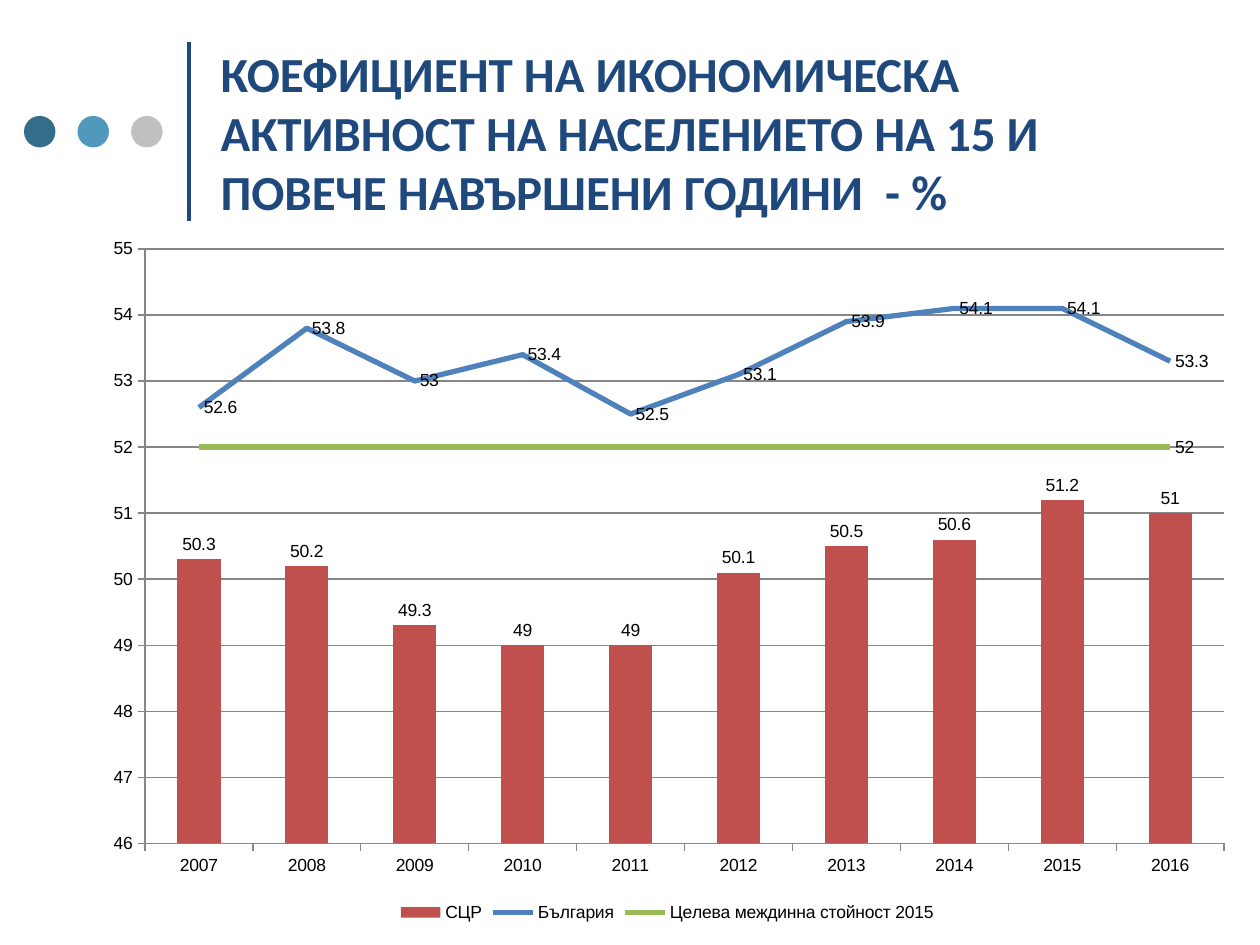
from lxml import etree
from pptx import Presentation
from pptx.chart.data import CategoryChartData
from pptx.dml.color import RGBColor
from pptx.enum.chart import (XL_CHART_TYPE, XL_LABEL_POSITION, XL_LEGEND_POSITION,
                             XL_MARKER_STYLE, XL_TICK_MARK)
from pptx.enum.shapes import MSO_CONNECTOR, MSO_SHAPE
from pptx.enum.text import MSO_ANCHOR, MSO_AUTO_SIZE, PP_ALIGN
from pptx.oxml import parse_xml
from pptx.oxml.ns import nsdecls, qn
from pptx.util import Inches, Pt

COLUMN = XL_CHART_TYPE.COLUMN_CLUSTERED
ABOVE = XL_LABEL_POSITION.OUTSIDE_END
RIGHT = XL_LABEL_POSITION.RIGHT
BOTTOM = XL_LEGEND_POSITION.BOTTOM
PLAIN = XL_MARKER_STYLE.NONE
OUT = XL_TICK_MARK.OUTSIDE
STRAIGHT = MSO_CONNECTOR.STRAIGHT
OVAL = MSO_SHAPE.OVAL
MIDDLE = MSO_ANCHOR.MIDDLE
FIXED = MSO_AUTO_SIZE.NONE
LEFT = PP_ALIGN.LEFT

NAVY = "1F497D"
GRAY = "878787"
DOTS = ["356E8B", "5098BC", "C0C0C0"]
TITLE = ("КОЕФИЦИЕНТ НА ИКОНОМИЧЕСКА АКТИВНОСТ НА НАСЕЛЕНИЕТО "
         "НА 15 И ПОВЕЧЕ НАВЪРШЕНИ ГОДИНИ  - %")
YEARS = [str(year) for year in range(2007, 2017)]
REGION = [50.3, 50.2, 49.3, 49, 49, 50.1, 50.5, 50.6, 51.2, 51]
NATION = [52.6, 53.8, 53, 53.4, 52.5, 53.1, 53.9, 54.1, 54.1, 53.3]
TARGET = [52] * len(YEARS)


def color(code):
    return RGBColor.from_string(code)


def place(shape, left, top, width, height):
    shape.left, shape.top = Inches(left), Inches(top)
    shape.width, shape.height = Inches(width), Inches(height)


def write(frame, text, size, font, ink, bold=False, align=LEFT):
    frame.word_wrap = True
    frame.auto_size = FIXED
    frame.vertical_anchor = MIDDLE
    frame.margin_left = frame.margin_right = Inches(0.08)
    frame.margin_top = frame.margin_bottom = Inches(0.08)
    para = frame.paragraphs[0]
    para.alignment = align
    para.line_spacing = 1.0
    run = para.add_run()
    run.text = text
    run.font.size = Pt(size)
    run.font.name = font
    run.font.bold = bold
    run.font.color.rgb = color(ink)


def add_rule(slide):
    rule = slide.shapes.add_connector(
        STRAIGHT, Inches(1.5), Inches(1.75), Inches(1.5), Inches(0.33))
    rule.line.color.rgb = color(NAVY)
    rule.line.width = Pt(2)
    etree.SubElement(rule._element.spPr, qn("a:effectLst"))


def add_dots(slide):
    group = slide.shapes.add_group_shape()
    for index, fill in enumerate(DOTS):
        dot = group.shapes.add_shape(
            OVAL, Inches(0.19 + 0.425 * index), Inches(0.92), Inches(0.25), Inches(0.25))
        dot.shadow.inherit = False
        dot.fill.solid()
        dot.fill.fore_color.rgb = color(fill)
        dot.line.fill.background()


def split_lines(chart):
    bars = chart._chartSpace.find(".//" + qn("c:barChart"))
    lines = parse_xml(
        f'<c:lineChart {nsdecls("c")}><c:grouping val="standard"/>'
        '<c:varyColors val="0"/><c:marker val="1"/></c:lineChart>')
    marker = lines.find(qn("c:marker"))
    for ser in bars.findall(qn("c:ser"))[1:]:
        for flag in ser.findall(qn("c:invertIfNegative")):
            ser.remove(flag)
        marker.addprevious(ser)
    for axis in bars.findall(qn("c:axId")):
        etree.SubElement(lines, qn("c:axId")).set("val", axis.get("val"))
    bars.addnext(lines)


def set_plot(chart, **box):
    area = chart._chartSpace.find(".//" + qn("c:plotArea"))
    for old in area.findall(qn("c:layout")):
        area.remove(old)
    sizes = "".join(f'<c:{name} val="{value}"/>' for name, value in box.items())
    area.insert(0, parse_xml(
        f'<c:layout {nsdecls("c")}><c:manualLayout><c:layoutTarget val="inner"/>'
        f'<c:xMode val="edge"/><c:yMode val="edge"/>{sizes}'
        '</c:manualLayout></c:layout>'))


def style_axes(chart):
    value = chart.value_axis
    value.minimum_scale, value.maximum_scale = 46, 55
    value.major_unit = 1
    value.has_major_gridlines = True
    for axis in (chart.category_axis, value):
        axis.major_tick_mark = OUT
        axis.format.line.color.rgb = color(GRAY)
    value.major_gridlines.format.line.color.rgb = color(GRAY)


def style_line(series, ink):
    series.smooth = False
    series.marker.style = PLAIN
    series.format.line.color.rgb = color(ink)
    series.format.line.width = Pt(3)


def label(series, spot):
    series.data_labels.show_value = True
    series.data_labels.position = spot


def add_chart(slide):
    data = CategoryChartData()
    data.categories = YEARS
    data.add_series("СЦР", REGION)
    data.add_series("България", NATION)
    data.add_series("Целева междинна стойност 2015", TARGET)
    chart = slide.shapes.add_chart(
        COLUMN, Inches(0.69), Inches(1.81), Inches(9.21), Inches(5.55), data).chart
    chart.has_title = False
    chart.font.size = Pt(10)
    chart.font.name = "Arial"
    chart.font.color.rgb = color("000000")
    chart.has_legend = True
    chart.legend.position = BOTTOM
    chart.legend.include_in_layout = False
    split_lines(chart)
    set_plot(chart, x=0.05, y=0.03, w=0.93, h=0.85)
    style_axes(chart)

    bars, lines = chart.plots
    bars.gap_width = 150
    bars.vary_by_categories = False
    region = bars.series[0]
    region.format.fill.solid()
    region.format.fill.fore_color.rgb = color("C0504D")
    label(region, ABOVE)

    nation, target = lines.series
    style_line(nation, "4F81BD")
    label(nation, RIGHT)
    style_line(target, "9BBB59")
    target.data_labels.show_value = False
    target.points[len(YEARS) - 1].data_label.position = RIGHT


def main():
    deck = Presentation()
    deck.slide_width, deck.slide_height = Inches(10), Inches(7.5)
    slide = deck.slides.add_slide(deck.slide_layouts[5])
    add_rule(slide)
    add_dots(slide)
    title = slide.shapes.title
    place(title, 1.67, 0.21, 7.67, 1.67)
    write(title.text_frame, TITLE, 28, "Calibri", NAVY, bold=True)
    add_chart(slide)
    deck.save("out.pptx")


if __name__ == "__main__":
    main()
